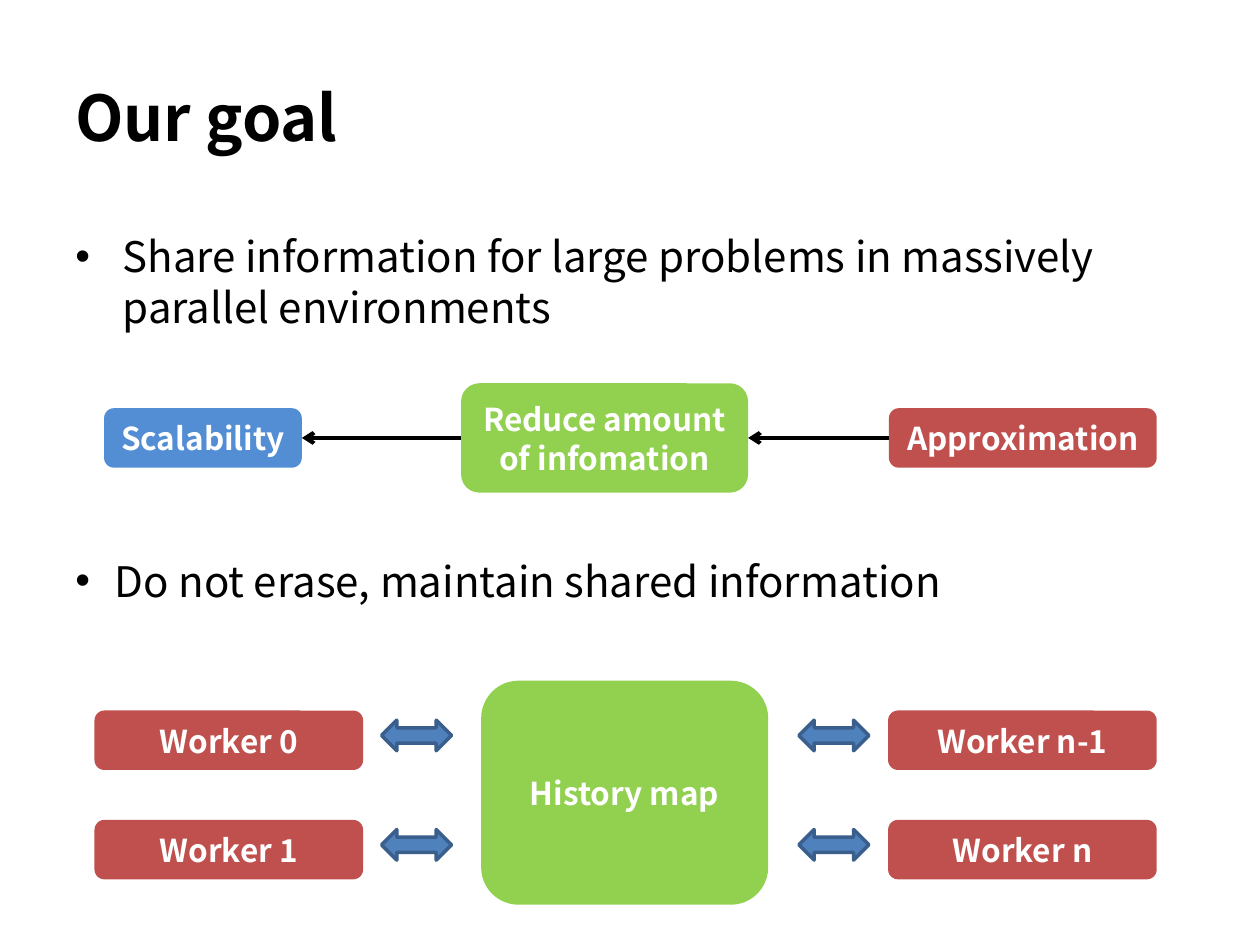
from lxml import etree
from pptx import Presentation
from pptx.dml.color import RGBColor
from pptx.enum.shapes import MSO_CONNECTOR, MSO_SHAPE
from pptx.enum.text import MSO_ANCHOR, PP_ALIGN
from pptx.oxml.ns import qn
from pptx.util import Pt

ROUNDED = MSO_SHAPE.ROUNDED_RECTANGLE
DOUBLE_ARROW = MSO_SHAPE.LEFT_RIGHT_ARROW
STRAIGHT = MSO_CONNECTOR.STRAIGHT
MIDDLE = MSO_ANCHOR.MIDDLE
CENTER = PP_ALIGN.CENTER

FONT = "Noto Sans CJK KR"
BLACK, WHITE = "000000", "FFFFFF"
BLUE, RED, GREEN = "538ED5", "C0504D", "92D050"
ARROW_FILL, ARROW_LINE = "4F81BD", "3A5F8C"
LABEL_H = 34


def color(value):
    return RGBColor.from_string(value)


def add_run(p, text, size, hex_color=BLACK, bold=False):
    r = p.add_run()
    r.text = text
    for name, value in {"name": FONT, "size": Pt(size), "bold": bold}.items():
        setattr(r.font, name, value)
    r.font.color.rgb = color(hex_color)


def add_text_frame(s, box):
    tf = s.shapes.add_textbox(*map(Pt, box)).text_frame
    tf.word_wrap = True
    return tf


def add_title(s, box, text):
    tf = add_text_frame(s, box)
    tf.vertical_anchor = MIDDLE
    add_run(tf.paragraphs[0], text, 36, bold=True)


def add_bullets(s, box, bullets):
    """Each bullet is (text, hanging indent, space before)."""
    tf = add_text_frame(s, box)
    for i, (text, indent, before) in enumerate(bullets):
        p = tf.add_paragraph() if i else tf.paragraphs[0]
        p.space_before, p.line_spacing = Pt(before), Pt(29.2)
        add_run(p, text, 24)
        pPr = p._p.get_or_add_pPr()
        pPr.set("marL", str(Pt(indent)))
        pPr.set("indent", str(-Pt(indent)))
        etree.SubElement(pPr, qn("a:buFont"), typeface="Arial")
        etree.SubElement(pPr, qn("a:buChar"), char="•")


def add_block(s, kind, box, fill):
    sp = s.shapes.add_shape(kind, *map(Pt, box))
    sp.shadow.inherit = False
    sp.fill.solid()
    sp.fill.fore_color.rgb = color(fill)
    sp.line.fill.background()
    return sp


def add_label(s, box, text, fill):
    tf = add_block(s, ROUNDED, box, fill).text_frame
    tf.word_wrap = True
    tf.vertical_anchor = MIDDLE
    p = tf.paragraphs[0]
    p.alignment = CENTER
    p.line_spacing = Pt(22)
    add_run(p, text, 18, WHITE, True)


def add_arrow(s, x1, x2, y):
    line = s.shapes.add_connector(STRAIGHT, Pt(x1), Pt(y), Pt(x2), Pt(y))
    line.line.color.rgb = color(BLACK)
    line.line.width = Pt(2.25)
    etree.SubElement(line.line._get_or_add_ln(), qn("a:tailEnd"), type="arrow")
    etree.SubElement(line._element.spPr, qn("a:effectLst"))


def add_double_arrow(s, box):
    sp = add_block(s, DOUBLE_ARROW, box, ARROW_FILL)
    sp.line.color.rgb = color(ARROW_LINE)
    sp.line.width = Pt(2)


def add_flow(s, box):
    """Goal, means and method from left to right, with arrows pointing left."""
    x, y, w, h = box
    mid = y + h / 2
    steps = [
        ("Scalability", 0, 113, LABEL_H, BLUE),
        ("Reduce amount of infomation", 204, 164, h, GREEN),
        ("Approximation", w - 153, 153, LABEL_H, RED),
    ]
    for text, dx, width, height, fill in steps:
        add_label(s, (x + dx, mid - height / 2, width, height), text, fill)
    for (_, left, width, *_), (_, right, *_) in zip(steps, steps[1:]):
        add_arrow(s, x + right, x + left + width, mid)


def add_worker_map(s, box):
    """History map in the middle, two workers on each side."""
    x, y, w, h = box
    worker_w, arrow_w, row_pitch = 153.5, 40, 62.5
    add_label(s, (x + 221, y, 164, h), "History map", GREEN)
    sides = [
        (0, 164, ("Worker 0", "Worker 1")),
        (w - worker_w, 402.5, ("Worker n-1", "Worker n")),
    ]
    for worker_x, arrow_x, names in sides:
        for row, name in enumerate(names):
            top = y + 17 + row * row_pitch
            add_label(s, (x + worker_x, top, worker_w, LABEL_H), name, RED)
            add_double_arrow(s, (x + arrow_x, top + 5.5, arrow_w, 17.5))


def main():
    prs = Presentation()
    prs.slide_width, prs.slide_height = Pt(720), Pt(540)
    s = prs.slides.add_slide(prs.slide_layouts[6])
    add_title(s, (36, 21.6, 648, 90), "Our goal")
    add_bullets(s, (36, 128, 648, 354), [
        ("Share information for large problems in massively parallel environments", 27, 0),
        ("Do not erase, maintain shared information", 22.5, 127),
    ])
    add_flow(s, (59.5, 219, 601.5, 62.5))
    add_worker_map(s, (54, 389, 607, 128))
    prs.save("out.pptx")


if __name__ == "__main__":
    main()
